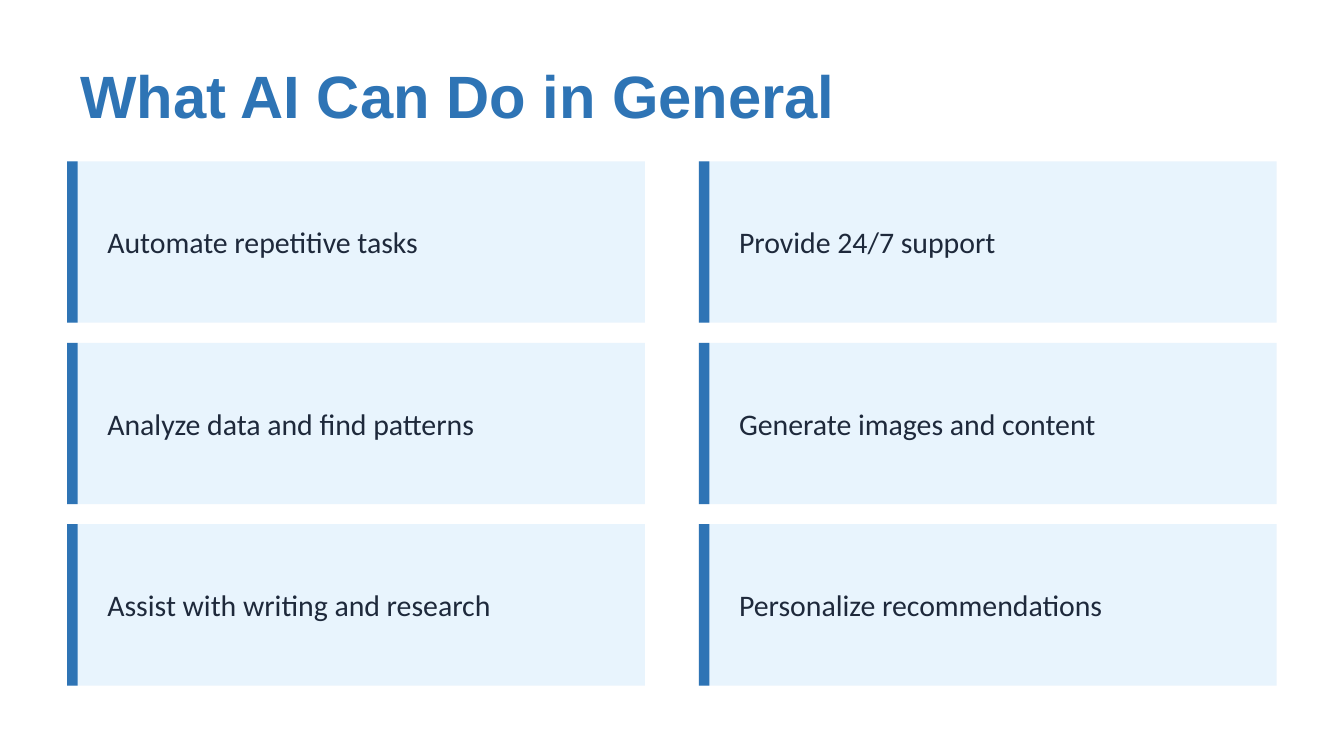
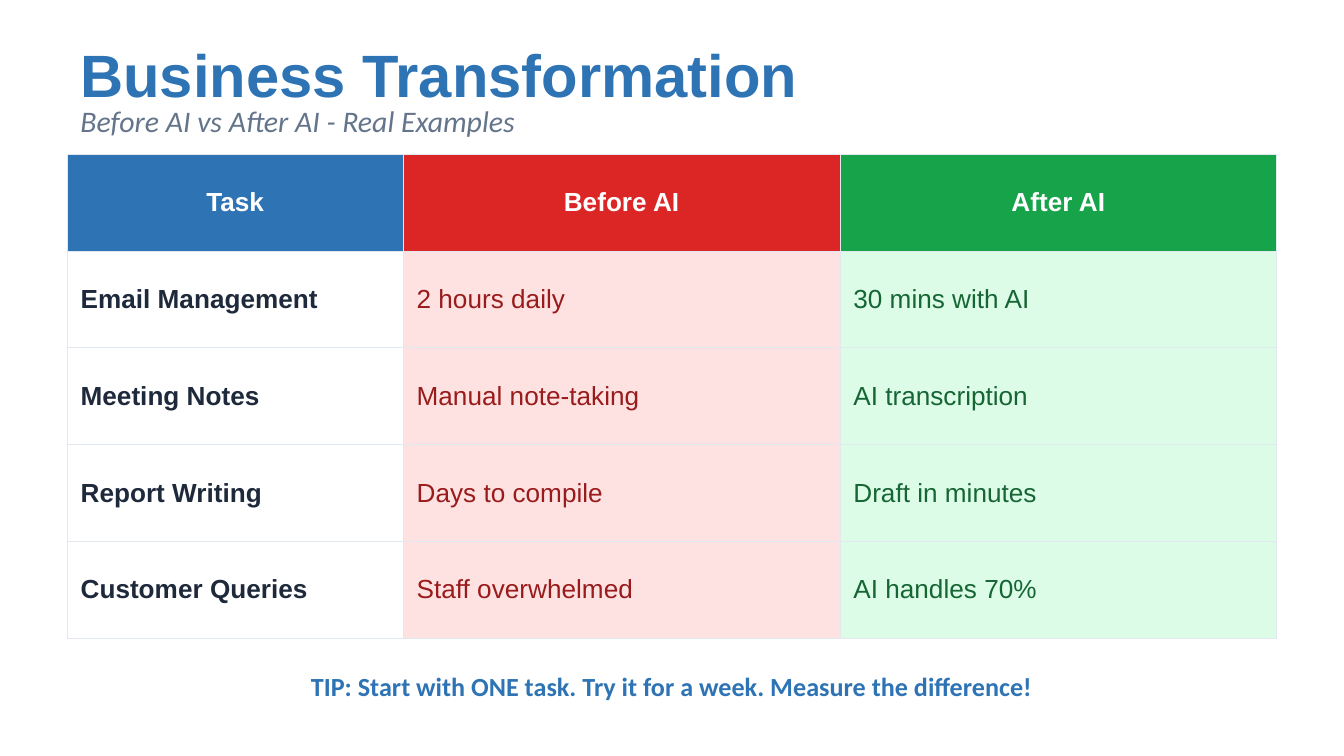
from pptx import Presentation
from pptx.dml.color import RGBColor
from pptx.enum.shapes import MSO_SHAPE as Shape
from pptx.enum.text import MSO_ANCHOR as Anchor, PP_ALIGN as Align
from pptx.oxml import parse_xml
from pptx.oxml.ns import nsdecls
from pptx.util import Cm, Pt

# Shared look
rgb = RGBColor.from_string
BLUE, INK, GREY, WHITE = "2E74B5", "1E293B", "64748B", "FFFFFF"
PALE_BLUE, BORDER = "E8F4FD", "E2E8F0"
HEAD, BODY = "Arial", "Calibri"
LEFT, WIDTH = 1.27, 22.86
TITLE = dict(size=32, font=HEAD, colour=BLUE, bold=True)


def write(frame, text, size, font, colour, bold=False, italic=False, align=Align.LEFT):
    para = frame.paragraphs[0]
    para.alignment = align
    span = para.add_run()
    span.text = text
    span.font.size = Pt(size)
    span.font.name = font
    span.font.color.rgb = rgb(colour)
    span.font.bold = bold
    span.font.italic = italic


def add_text(page, left, top, width, height, text, **style):
    box = page.shapes.add_textbox(Cm(left), Cm(top), Cm(width), Cm(height))
    box.text_frame.word_wrap = True
    box.text_frame.vertical_anchor = Anchor.MIDDLE
    write(box.text_frame, text, **style)


deck = Presentation()
deck.slide_width, deck.slide_height = Cm(25.4), Cm(14.29)
blank = deck.slide_layouts[6]

# Slide 1: two columns of cards, each with an accent bar
page = deck.slides.add_slide(blank)
add_text(page, LEFT, 1.02, WIDTH, 1.52, "What AI Can Do in General", **TITLE)

abilities = [
    ["Automate repetitive tasks", "Analyze data and find patterns",
     "Assist with writing and research"],
    ["Provide 24/7 support", "Generate images and content",
     "Personalize recommendations"],
]
CARD_WIDTH, CARD_HEIGHT, BAR_WIDTH = 10.92, 3.05, 0.2
for column, labels in enumerate(abilities):
    for row, label in enumerate(labels):
        left = LEFT + column * 11.94
        top = 3.05 + row * 3.43
        for width, colour in ((CARD_WIDTH, PALE_BLUE), (BAR_WIDTH, BLUE)):
            block = page.shapes.add_shape(
                Shape.RECTANGLE, Cm(left), Cm(top), Cm(width), Cm(CARD_HEIGHT))
            block.shadow.inherit = False
            block.fill.solid()
            block.fill.fore_color.rgb = rgb(colour)
            block.line.fill.background()
        add_text(page, left + 0.51, top + 0.38, 9.91, 2.29, label,
                 size=16, font=BODY, colour=INK)

# Slide 2: comparison table
page = deck.slides.add_slide(blank)
add_text(page, LEFT, 0.76, WIDTH, 1.27, "Business Transformation", **TITLE)
add_text(page, LEFT, 1.9, WIDTH, 0.76, "Before AI vs After AI - Real Examples",
         size=16, font=BODY, colour=GREY, italic=True)

rows = [
    ("Task", "Before AI", "After AI"),
    ("Email Management", "2 hours daily", "30 mins with AI"),
    ("Meeting Notes", "Manual note-taking", "AI transcription"),
    ("Report Writing", "Days to compile", "Draft in minutes"),
    ("Customer Queries", "Staff overwhelmed", "AI handles 70%"),
]
# Per column: header fill, body fill, body text colour
column_colours = [
    (BLUE, None, INK),
    ("DC2626", "FEE2E2", "991B1B"),
    ("16A34A", "DCFCE7", "166534"),
]
TASK_WIDTH = 6.35
RESULT_WIDTH = (WIDTH - TASK_WIDTH) / 2
table = page.shapes.add_table(
    len(rows), 3, Cm(LEFT), Cm(2.92), Cm(WIDTH), Cm(9.14)).table
table.horz_banding = False
for column, width in zip(table.columns, (TASK_WIDTH, RESULT_WIDTH, RESULT_WIDTH)):
    column.width = Cm(width)

for r, texts in enumerate(rows):
    for c, text in enumerate(texts):
        is_header = r == 0
        header_fill, body_fill, body_colour = column_colours[c]
        cell = table.cell(r, c)
        cell.vertical_anchor = Anchor.MIDDLE
        write(cell.text_frame, text, size=14, font=HEAD,
              colour=WHITE if is_header else body_colour,
              bold=is_header or c == 0,
              align=Align.CENTER if is_header else Align.LEFT)

        # Borders come before the fill in the cell properties
        properties = cell._tc.get_or_add_tcPr()
        for side in ("lnL", "lnR", "lnT", "lnB"):
            properties.append(parse_xml(
                f'<a:{side} {nsdecls("a")} w="{Pt(0.5)}"><a:solidFill>'
                f'<a:srgbClr val="{BORDER}"/></a:solidFill></a:{side}>'))
        fill = header_fill if is_header else body_fill
        if fill:
            cell.fill.solid()
            cell.fill.fore_color.rgb = rgb(fill)
        else:
            cell.fill.background()

# Closing tip
add_text(page, LEFT, 12.45, WIDTH, 1.02,
         "TIP: Start with ONE task. Try it for a week. Measure the difference!",
         size=14, font=BODY, colour=BLUE, bold=True, align=Align.CENTER)

deck.save("out.pptx")
